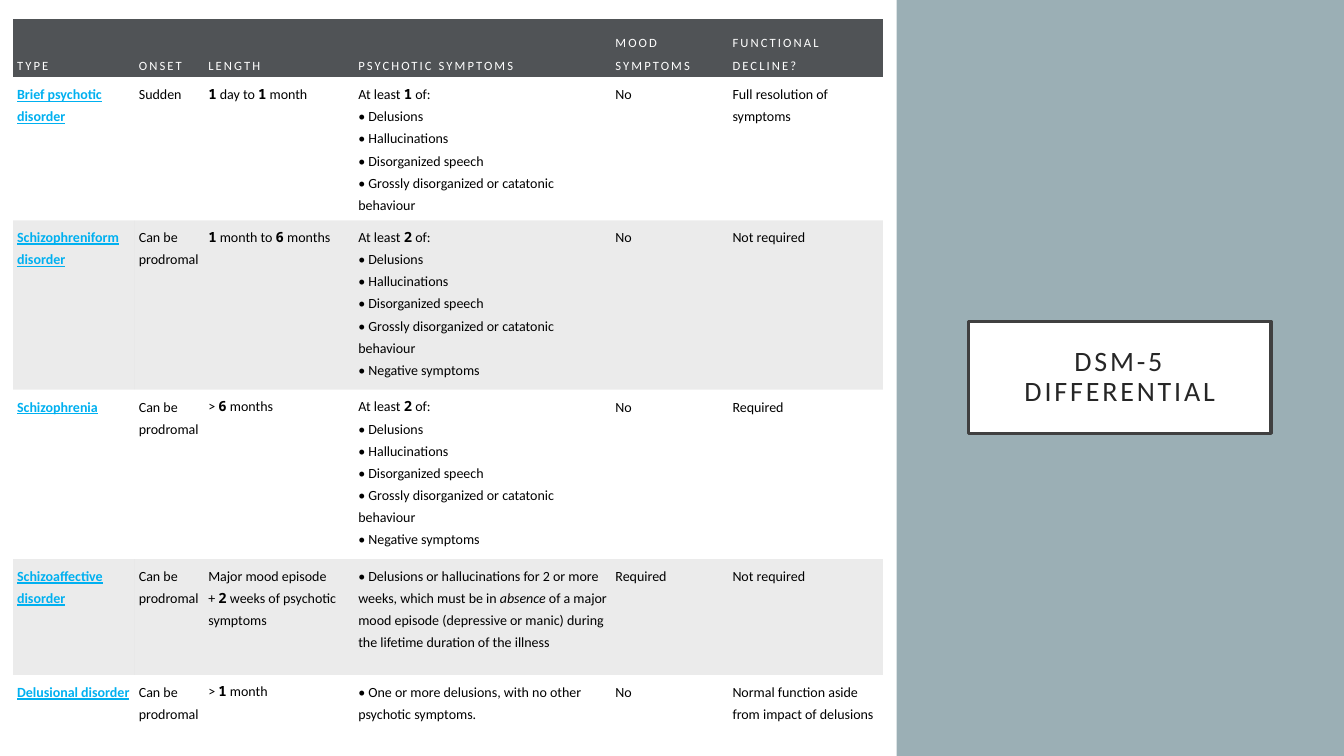
"""Build the DSM-5 differential slide: a table of disorders beside a boxed title."""
from lxml import etree
from pptx import Presentation
from pptx.dml.color import RGBColor
from pptx.enum import shapes, text
from pptx.oxml import ns
from pptx.util import Cm, Pt

TITLE = "DSM-5 DIFFERENTIAL"
HEADS = ["TYPE", "ONSET", "LENGTH", "PSYCHOTIC SYMPTOMS", "MOOD SYMPTOMS", "FUNCTIONAL DECLINE?"]
SIGNS = """ of:
• Delusions
• Hallucinations
• Disorganized speech
• Grossly disorganized or catatonic behaviour"""
MORE = SIGNS + "\n• Negative symptoms"
EARLY = "Can be prodromal"
ROWS = [
    ["Brief psychotic disorder", "Sudden", "*1* day to *1* month",
     "At least *1*" + SIGNS, "No", "Full resolution of symptoms"],
    ["Schizophreniform disorder", EARLY, "*1* month to *6* months",
     "At least *2*" + MORE, "No", "Not required"],
    ["Schizophrenia", EARLY, "> *6* months",
     "At least *2*" + MORE, "No", "Required"],
    ["Schizoaffective disorder", EARLY,
     "Major mood episode\n+ *2* weeks of psychotic symptoms",
     "• Delusions or hallucinations for 2 or more weeks, which must be in *absence* of a major "
     "mood episode (depressive or manic) during the lifetime duration of the illness",
     "Required", "Not required"],
    ["Delusional disorder", EARLY, "> *1* month",
     "• One or more delusions, with no other psychotic symptoms.", "No",
     "Normal function aside from impact of delusions"],
]
WIDTHS = [3.07, 1.75, 3.78, 6.48, 2.95, 3.89]
HEIGHTS = [1.47, 3.6, 4.27, 4.27, 2.92, 1.57]
BLANK = "{2D5ABB26-0587-4C30-8999-92F81FD0307C}"

BASE = dict(name="Calibri", size=Pt(10), bold=False, italic=False, underline=False)
HEAD = BASE | dict(size=Pt(9))
LINK = BASE | dict(bold=True, underline=True)
COUNT = BASE | dict(name="Noto Sans Mono", bold=True)
STRESS = BASE | dict(italic=True)


def tint(code):
    """Turn a hex string into a colour."""
    return RGBColor.from_string(code)


def assign(item, values):
    """Set each named attribute on an item."""
    for key, value in values.items():
        setattr(item, key, value)


def paint(fill, code):
    """Give a fill one solid colour."""
    fill.solid()
    fill.fore_color.rgb = tint(code)


def write(para, words, style, code, gap=0):
    """Write words line by line in one style with letter spacing."""
    for i, line in enumerate(words.split("\n")):
        if i:
            para.add_line_break()
        if line:
            run = para.add_run()
            run.text = line
            assign(run.font, style)
            run.font.color.rgb = tint(code)
            run.font._element.set("spc", str(gap))


def fill_cell(cell, words, row, col):
    """Fill one table cell; starred parts are counts or stressed words."""
    edges = dict.fromkeys(["margin_left", "margin_top", "margin_right", "margin_bottom"], Cm(0.1))
    anchor = text.MSO_ANCHOR.TOP if row else text.MSO_ANCHOR.BOTTOM
    assign(cell, edges | dict(vertical_anchor=anchor))
    para = cell.text_frame.paragraphs[0]
    para.line_spacing = Pt(15.8)
    if row == 0:
        paint(cell.fill, "505356")
        write(para, words, HEAD, "FFFFFF", 150)
        return
    if row % 2:
        cell.fill.background()
    else:
        paint(cell.fill, "000000")
        shade = cell._tc.tcPr.find(".//" + ns.qn("a:srgbClr"))
        etree.SubElement(shade, ns.qn("a:alpha")).set("val", "8000")
    for i, part in enumerate(words.split("*")):
        style = BASE if col else LINK
        if i % 2:
            style = COUNT if part.isdigit() else STRESS
        write(para, part, style, "000000" if col else "00B0F0")


def add_title(slide):
    """Format the title placeholder as a framed box."""
    box = slide.shapes.title
    assign(box, dict(left=Cm(24.41), top=Cm(8.1), width=Cm(7.62), height=Cm(2.82)))
    paint(box.fill, "FFFFFF")
    paint(box.line.fill, "404040")
    box.line.width = Pt(2.5)
    frame = box.text_frame
    edges = dict.fromkeys(["margin_left", "margin_top", "margin_right", "margin_bottom"], Cm(0.5))
    assign(frame, edges | dict(word_wrap=True, auto_size=text.MSO_AUTO_SIZE.NONE,
                               vertical_anchor=text.MSO_ANCHOR.MIDDLE))
    para = frame.paragraphs[0]
    assign(para, dict(alignment=text.PP_ALIGN.CENTER, line_spacing=0.9))
    write(para, TITLE, BASE | dict(size=Pt(20)), "262626", 200)


def add_grid(slide):
    """Add the table of disorders."""
    size = Cm(sum(WIDTHS)), Cm(sum(HEIGHTS))
    grid = slide.shapes.add_table(len(HEIGHTS), len(WIDTHS), Cm(0.33), Cm(0.48), *size).table
    assign(grid, dict(first_row=False, horz_banding=False))
    grid._tbl.tblPr[0].text = BLANK
    for col, width in zip(grid.columns, WIDTHS):
        col.width = Cm(width)
    for row, height in zip(grid.rows, HEIGHTS):
        row.height = Cm(height)
    for r, row in enumerate([HEADS] + ROWS):
        for c, words in enumerate(row):
            fill_cell(grid.cell(r, c), words, r, c)


def main():
    """Build and save the slide."""
    deck = Presentation()
    assign(deck, dict(slide_width=Cm(33.87), slide_height=Cm(19.05)))
    slide = deck.slides.add_slide(deck.slide_layouts[5])
    paint(slide.background.fill, "9BAFB5")
    add_title(slide)
    panel = slide.shapes.add_shape(shapes.MSO_SHAPE.RECTANGLE, 0, 0, Cm(22.6), deck.slide_height)
    panel.shadow.inherit = False
    paint(panel.fill, "FFFFFF")
    panel.line.fill.background()
    add_grid(slide)
    deck.save("out.pptx")


if __name__ == "__main__":
    main()
